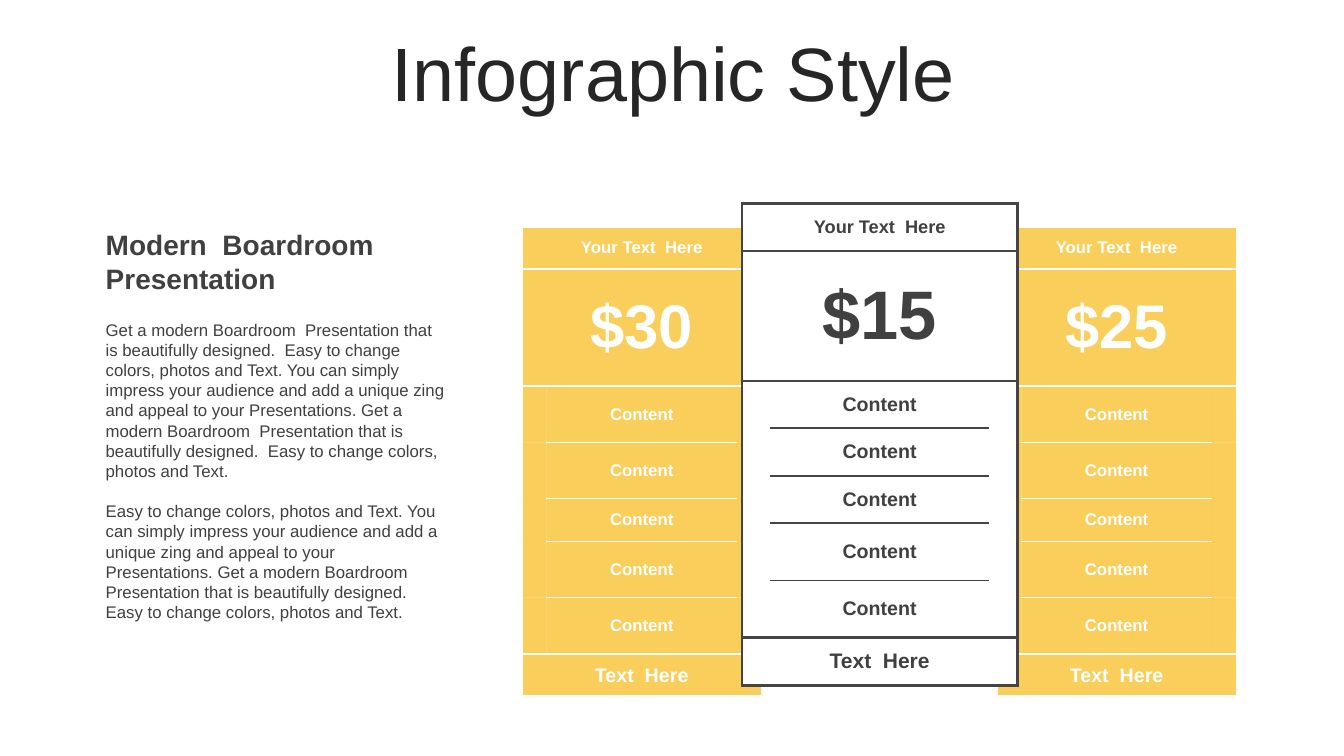
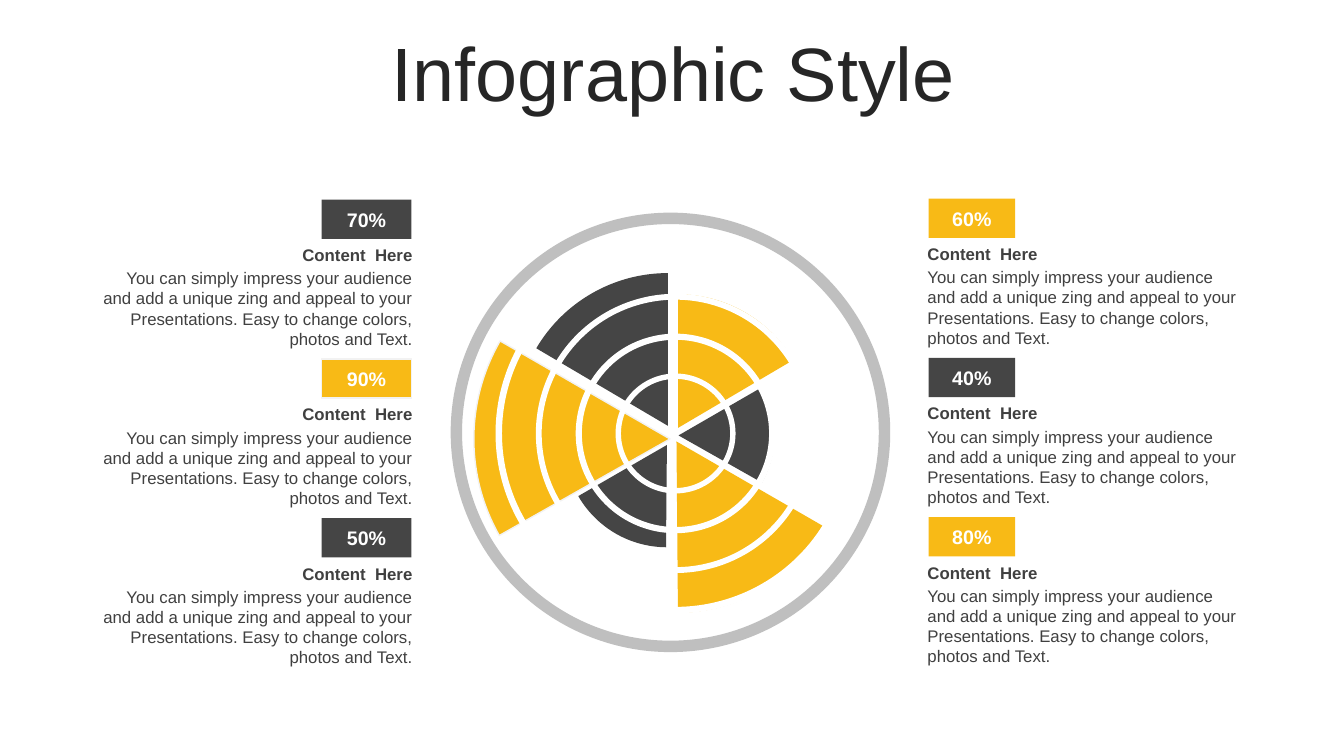
from lxml import etree
from pptx import Presentation
from pptx.dml.color import RGBColor
from pptx.enum.shapes import MSO_SHAPE
from pptx.enum.text import MSO_ANCHOR, MSO_AUTO_SIZE, PP_ALIGN
from pptx.oxml.ns import qn
from pptx.util import Inches, Pt

LEFT, MID, RIGHT = PP_ALIGN.LEFT, PP_ALIGN.CENTER, PP_ALIGN.RIGHT
MIDDLE = MSO_ANCHOR.MIDDLE
NO_FIT = MSO_AUTO_SIZE.NONE
RECT, PIE, DONUT = MSO_SHAPE.RECTANGLE, MSO_SHAPE.PIE, MSO_SHAPE.DONUT
TITLE_ONLY = 5
FONT = "Arial"
COLORS = {
    "title": "262626", "text": "404040", "dark": "454545", "gold": "F8BA16",
    "white": "FFFFFF", "ring": "BFBFBF", "edge": "F2F2F2",
}
SIDES = {"l": "a:lnL", "r": "a:lnR", "t": "a:lnT", "b": "a:lnB"}
SWEEP = 59.5

ROWS = 8
LABELS = ["Content"] * 5
GOLD_PLAN = {
    "cols": [0.25, 1.89, 0.25],
    "rows": [0.42, 1.16, 0.56, 0.56, 0.42, 0.56, 0.56, 0.42],
    "sizes": [12, 44] + [12] * 5 + [14],
    "fill": "gold", "alpha": 70, "ink": "white", "line": "white",
    "rule": 1, "top": 1.5, "pad": (0.1, 0.05),
}
WHITE_PLAN = {
    "cols": [0.28, 2.17, 0.28],
    "rows": [0.47, 1.29, 0.47, 0.47, 0.47, 0.57, 0.57, 0.47],
    "sizes": [13, 49] + [14] * 5 + [15],
    "fill": "white", "alpha": 100, "ink": "text", "line": "dark",
    "rule": 1.5, "top": 2.25, "pad": (0.11, 0.06),
}
FRAME = 2.25


def color(name):
    return RGBColor.from_string(COLORS[name])


def edges(row, col, plan):
    """Border widths by side for one cell of a price table."""
    if row in (0, 1, ROWS - 1):
        widths = dict.fromkeys("lrtb", FRAME)
        if row == 1:
            widths["b"] = plan["top"]
        return widths
    widths = {}
    if col == 1:
        widths = {"t": plan["rule"], "b": plan["rule"]}
    else:
        widths["l" if col == 0 else "r"] = FRAME
    if row == 2:
        widths["t"] = plan["top"]
    if row == ROWS - 2:
        widths["b"] = FRAME
    return widths


class Deck:
    def __init__(self):
        self.prs = Presentation()
        self.prs.slide_width = Inches(13.33)
        self.prs.slide_height = Inches(7.5)
        self.slide = None

    def place(self, shape, box):
        shape.left, shape.top, shape.width, shape.height = map(Inches, box)

    def style(self, para, size, ink, bold=False, align=LEFT):
        para.alignment = align
        font = para.font
        font.name, font.size, font.bold = FONT, Pt(size), bold
        font.color.rgb = color(ink)

    def start(self, title):
        layout = self.prs.slide_layouts[TITLE_ONLY]
        self.slide = self.prs.slides.add_slide(layout)
        head = self.slide.shapes.title
        self.place(head, (0.35, 0.37, 12.66, 0.79))
        frame = head.text_frame
        frame.text = title
        frame.auto_size = NO_FIT
        frame.vertical_anchor = MIDDLE
        para = frame.paragraphs[0]
        para.line_spacing, para.space_before = 0.9, Pt(10)
        self.style(para, 54, "title", align=MID)

    def text(self, box, paras, size=12, bold=False, align=LEFT, gap=0):
        frame = self.slide.shapes.add_textbox(*map(Inches, box)).text_frame
        frame.word_wrap = True
        frame.text = "\n".join(paras)
        for i, para in enumerate(frame.paragraphs):
            self.style(para, size, "text", bold, align)
            if i:
                para.space_before = Pt(gap)

    def shape(self, kind, box, fill, edge=None, adjust=()):
        item = self.slide.shapes.add_shape(kind, *map(Inches, box))
        item.shadow.inherit = False
        item.fill.solid()
        item.fill.fore_color.rgb = color(fill)
        if edge:
            item.line.color.rgb = color(edge)
            item.line.width = Pt(1)
        else:
            item.line.fill.background()
        for i, value in enumerate(adjust):
            item.adjustments[i] = value
        return item

    def badge(self, box, label, fill, edge=None):
        frame = self.shape(RECT, box, fill, edge).text_frame
        frame.text = label
        frame.vertical_anchor = MIDDLE
        self.style(frame.paragraphs[0], 14, "white", True, MID)

    def wedge(self, left, top, size, start, fill, edge=None):
        """Sector that begins at a clockwise angle in degrees."""
        ends = [angle % 360 * 0.6 for angle in (start, start + SWEEP)]
        self.shape(PIE, (left, top, size, size), fill, edge, ends)

    def ring(self, x, y, size, band, fill):
        box = (x - size / 2, y - size / 2, size, size)
        self.shape(DONUT, box, fill, adjust=[band])

    def border(self, cell, widths, line):
        props = cell._tc.get_or_add_tcPr()
        for side, tag in SIDES.items():
            node = etree.SubElement(props, qn(tag))
            if side not in widths:
                etree.SubElement(node, qn("a:noFill"))
                continue
            node.set("w", str(Pt(widths[side])))
            solid = etree.SubElement(node, qn("a:solidFill"))
            etree.SubElement(solid, qn("a:srgbClr"), val=COLORS[line])

    def paint(self, cell, fill, alpha):
        cell.fill.solid()
        cell.fill.fore_color.rgb = color(fill)
        if alpha < 100:
            tint = cell._tc.tcPr.find(".//" + qn("a:solidFill") + "/" + qn("a:srgbClr") + "[last()]")
            tint = cell._tc.tcPr.findall(qn("a:solidFill"))[-1][0]
            etree.SubElement(tint, qn("a:alpha"), val=str(alpha * 1000))

    def prices(self, left, top, price, plan):
        cols, rows = plan["cols"], plan["rows"]
        box = (left, top, sum(cols), sum(rows))
        grid = self.slide.shapes.add_table(
            ROWS, len(cols), *map(Inches, box)).table
        grid.first_row = grid.horz_banding = False
        for col, width in zip(grid.columns, cols):
            col.width = Inches(width)
        labels = ["Your Text  Here", price, *LABELS, "Text  Here"]
        for r, label in enumerate(labels):
            grid.rows[r].height = Inches(rows[r])
            wide = r in (0, 1, ROWS - 1)
            for c in range(len(cols)):
                cell = grid.cell(r, c)
                self.border(cell, edges(r, c, plan), plan["line"])
                self.paint(cell, plan["fill"], plan["alpha"])
            if wide:
                grid.cell(r, 0).merge(grid.cell(r, 2))
            cell = grid.cell(r, 0 if wide else 1)
            cell.text = label
            cell.vertical_anchor = MIDDLE
            side, edge = map(Inches, plan["pad"])
            cell.margin_left = cell.margin_right = side
            cell.margin_top = cell.margin_bottom = edge
            para = cell.text_frame.paragraphs[0]
            self.style(para, plan["sizes"][r], plan["ink"], True, MID)


def pricing(deck):
    deck.start("Infographic Style")
    deck.text((0.95, 2.21, 3.56, 0.77), ["Modern  Boardroom  Presentation"],
              size=20, bold=True)
    deck.prices(5.17, 2.25, "$30", GOLD_PLAN)
    deck.prices(9.88, 2.25, "$25", GOLD_PLAN)
    deck.prices(7.36, 2.02, "$15", WHITE_PLAN)
    deck.text((0.95, 3.12, 3.56, 2.93), [
        "Get a modern Boardroom  Presentation that is beautifully designed.  "
        "Easy to change colors, photos and Text. You can simply impress your "
        "audience and add a unique zing and appeal to your Presentations. "
        "Get a modern Boardroom  Presentation that is beautifully designed.  "
        "Easy to change colors, photos and Text.",
        "Easy to change colors, photos and Text. You can simply impress your "
        "audience and add a unique zing and appeal to your Presentations. "
        "Get a modern Boardroom  Presentation that is beautifully designed. "
        "Easy to change colors, photos and Text.",
    ], gap=14.5)


def radial(deck):
    deck.start("Infographic Style")
    deck.ring(6.65, 4.29, 4.36, 0.026, "ring")
    for wedge in [
        (5.11, 2.71, 3.03, 210.5, "dark"),
        (4.7, 2.41, 3.89, 150.5, "gold", "edge"),
        (5.6, 3.4, 2.03, 90.5, "dark"),
        (5.4, 2.92, 2.65, 270, "gold"),
        (5.78, 3.37, 1.9, 330, "dark"),
        (5.01, 2.68, 3.4, 30, "gold"),
    ]:
        deck.wedge(*wedge)

    note = ("You can simply impress your audience and add a unique zing and "
            "appeal to your Presentations. Easy to change colors, photos "
            "and Text.")
    lists = [
        (0.88, 3.19, 0.89, 1.98, RIGHT,
         [("70%", "dark"), ("90%", "gold", "edge"), ("50%", "dark")]),
        (9.1, 9.21, 0.86, 1.97, LEFT,
         [("60%", "gold"), ("40%", "dark"), ("80%", "gold")]),
    ]
    for left, tab, width, top, align, marks in lists:
        for i, mark in enumerate(marks):
            y = top + 1.58 * i
            deck.badge((tab, y, width, 0.39), *mark)
            deck.text((left, y + 0.63, 3.31, 0.91), [note], align=align)
            deck.text((left, y + 0.4, 3.31, 0.3), ["Content  Here"],
                      bold=True, align=align)

    for size, band in [(1.19, 0.045), (1.98, 0.031),
                       (2.77, 0.021), (3.57, 0.018)]:
        deck.ring(6.7, 4.3, size, band, "white")


def main():
    deck = Deck()
    pricing(deck)
    radial(deck)
    deck.prs.save("out.pptx")


if __name__ == "__main__":
    main()
